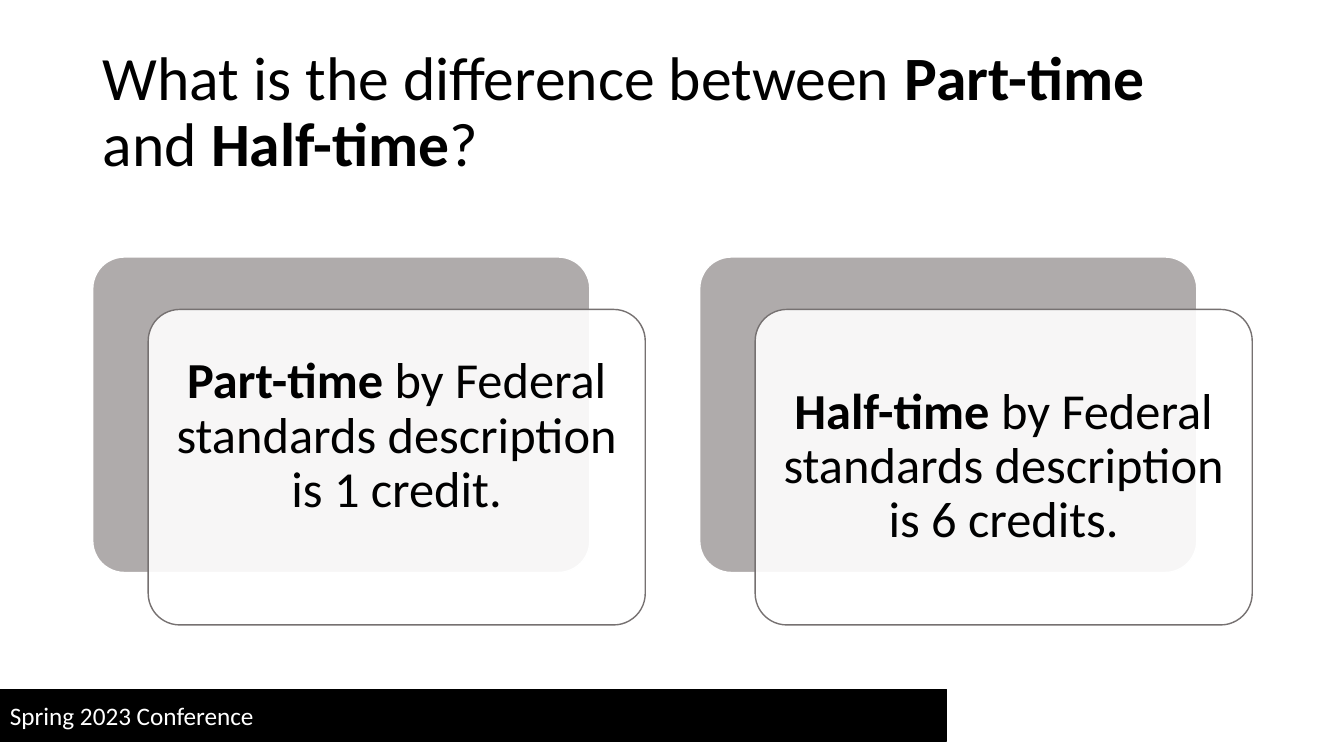
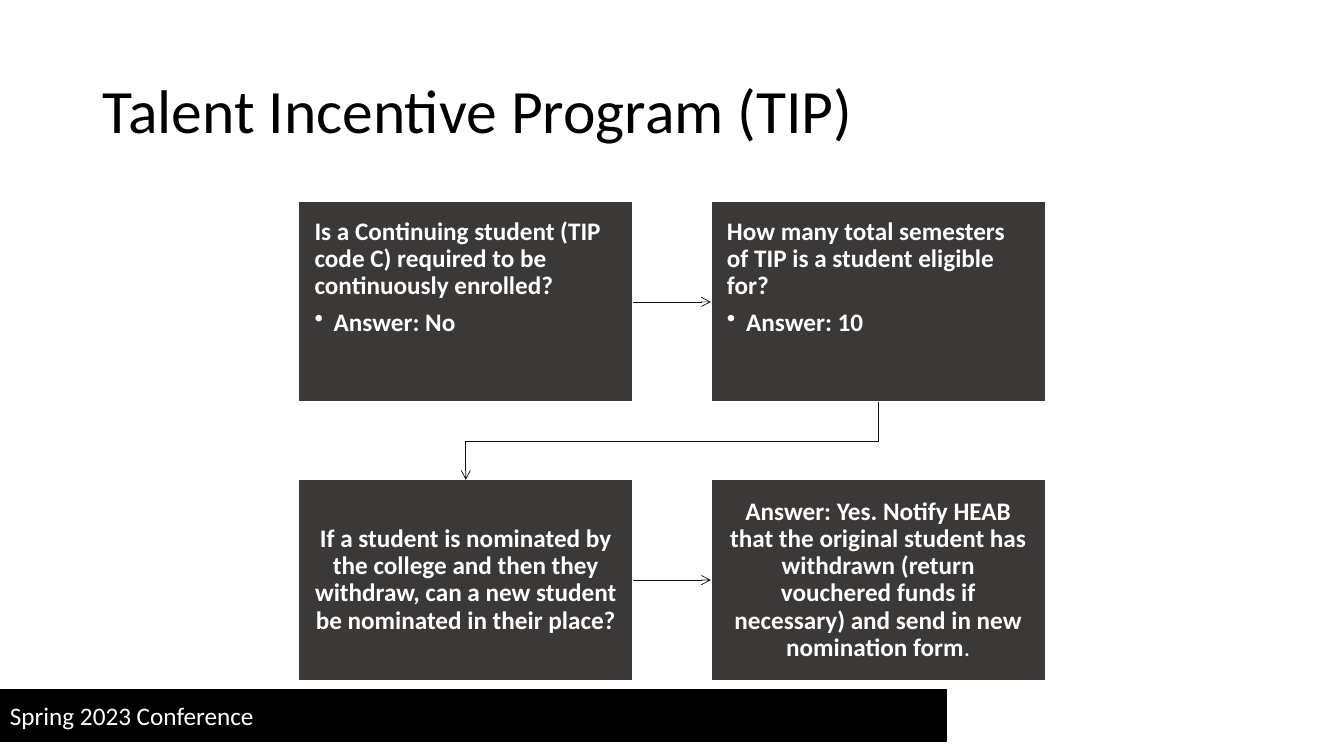
from dataclasses import dataclass
from typing import NamedTuple

import pptx
import pptx.dml.color
import pptx.enum.shapes
import pptx.enum.text
import pptx.oxml.ns
import pptx.util
from lxml import etree

Inches = pptx.util.Inches
Pt = pptx.util.Pt
qn = pptx.oxml.ns.qn
SHAPES = pptx.enum.shapes.MSO_SHAPE
CONNECTORS = pptx.enum.shapes.MSO_CONNECTOR
ALIGN = pptx.enum.text.PP_ALIGN
ANCHOR = pptx.enum.text.MSO_ANCHOR

FONT = "Calibri"
COLORS = {
    "ink": "000000",
    "paper": "FFFFFF",
    "card_back": "AFABAB",
    "card_edge": "767171",
    "step": "3B3838",
    "arrow": "0D0D0D",
}
TOP, LEFT, BOTTOM, RIGHT = range(4)  # connection sites of a rectangle


class Box(NamedTuple):
    left: float
    top: float
    width: float
    height: float

    def emu(self) -> list:
        return [Inches(length) for length in self]


@dataclass(frozen=True)
class Grid:
    """Equal cells, placed at a fixed step across and down."""
    left: float
    top: float
    width: float
    height: float
    step_x: float
    step_y: float = 0

    def cell(self, col: int, row: int = 0) -> Box:
        return Box(self.left + col * self.step_x, self.top + row * self.step_y,
                   self.width, self.height)


class Run(NamedTuple):
    text: str
    bold: bool = False


class Para(NamedTuple):
    runs: list
    bullet: bool = False


@dataclass(frozen=True)
class Definition:
    runs: list
    lift: float = 0  # extra room below the text


@dataclass(frozen=True)
class Step:
    col: int
    row: int
    paras: list
    centered: bool = False


# Places
SLIDE_W, SLIDE_H = 13.33, 7.5
TITLE = Box(0.92, 0.4, 11.5, 1.45)
BAND = Box(0, 6.84, 9.39, 0.51)
CARD_BACKS = Grid(0.92, 2.55, 4.93, 3.13, step_x=6.02)
CARD_FRONTS = Grid(1.47, 3.07, 4.93, 3.13, step_x=6.02)
FLOW = Grid(2.96, 2, 3.32, 1.99, step_x=4.09, step_y=2.76)

# Content
DIFFERENCE_TITLE = [Run("What is the difference between "), Run("Part-time", True),
                    Run(" and "), Run("Half-time", True), Run("?")]
DEFINITIONS = [
    Definition([Run("Part-time", True),
                Run(" by Federal standards description is 1 credit.")], lift=0.6),
    Definition([Run("Half-time", True),
                Run(" by Federal standards description is 6 credits.")]),
]
TIP_TITLE = [Run("Talent Incentive Program (TIP)")]
STEPS = [
    Step(0, 0, [
        Para([Run("Is a Continuing student (TIP code C) required to be "
                  "continuously enrolled?", True)]),
        Para([Run("Answer: No", True)], bullet=True)]),
    Step(1, 0, [
        Para([Run("How many total semesters of TIP is a student eligible for?", True)]),
        Para([Run("Answer: 10", True)], bullet=True)]),
    Step(0, 1, [
        Para([Run("If a student is nominated by the college and then they withdraw, "
                  "can a new student be nominated in their place?", True)])],
         centered=True),
    Step(1, 1, [
        Para([Run("Answer: Yes. Notify HEAB that the original student has withdrawn "
                  "(return vouchered funds if necessary) and send in new "
                  "nomination form", True), Run(".")])],
         centered=True),
]


def rgb(name: str):
    return pptx.dml.color.RGBColor.from_string(COLORS[name])


def write(shape, paras: list, *, size: float, color: str = "ink", align=ALIGN.LEFT,
          anchor=ANCHOR.MIDDLE, insets=(0.1, 0.05, 0.1, 0.05),
          spacing: float = 0.9, after: float = 0) -> None:
    """Fill a shape with formatted paragraphs; insets run left, top, right, bottom."""
    frame = shape.text_frame
    frame.word_wrap = True
    frame.auto_size = pptx.enum.text.MSO_AUTO_SIZE.NONE
    frame.vertical_anchor = anchor
    (frame.margin_left, frame.margin_top,
     frame.margin_right, frame.margin_bottom) = map(Inches, insets)
    for index, para in enumerate(paras):
        paragraph = frame.add_paragraph() if index else frame.paragraphs[0]
        if para.bullet:
            properties = paragraph._p.get_or_add_pPr()
            properties.set("marL", str(Inches(0.19)))
            properties.set("indent", str(-Inches(0.19)))
            etree.SubElement(properties, qn("a:buChar")).set("char", "•")
        paragraph.alignment = align
        paragraph.line_spacing = spacing
        paragraph.space_before = Pt(0)
        paragraph.space_after = Pt(after)
        for text, bold in para.runs:
            run = paragraph.add_run()
            run.text = text
            run.font.name = FONT
            run.font.size = Pt(size)
            run.font.bold = bold
            run.font.color.rgb = rgb(color)


def add_panel(slide, kind, box: Box, fill: str, line: str, opacity: int = 100):
    panel = slide.shapes.add_shape(kind, *box.emu())
    panel.shadow.inherit = False
    panel.fill.solid()
    panel.fill.fore_color.rgb = rgb(fill)
    panel.line.color.rgb = rgb(line)
    panel.line.width = Pt(1)
    if kind == SHAPES.ROUNDED_RECTANGLE:
        panel.adjustments[0] = 0.1
    if opacity < 100:
        color = panel.element.spPr.find(qn("a:solidFill")).find(qn("a:srgbClr"))
        etree.SubElement(color, qn("a:alpha")).set("val", str(opacity * 1000))
    return panel


def add_arrow(slide, kind, x1: float, y1: float, x2: float, y2: float):
    arrow = slide.shapes.add_connector(kind, *map(Inches, (x1, y1, x2, y2)))
    arrow.line.color.rgb = rgb("arrow")
    arrow.line.width = Pt(0.5)
    properties = arrow.element.spPr
    etree.SubElement(properties.find(qn("a:ln")), qn("a:tailEnd")).set("type", "arrow")
    etree.SubElement(properties, qn("a:effectLst"))
    return arrow


def add_return_arrow(slide, start: Box, end: Box) -> None:
    """Go down from the bottom of start, across, and down to the top of end."""
    x1, y1 = start.left + start.width / 2, start.top + start.height
    x2, y2 = end.left + end.width / 2, end.top
    mid_x, mid_y = (x1 + x2) / 2, (y1 + y2) / 2
    half_drop, half_run = (y2 - y1) / 2, (x1 - x2) / 2
    # The elbow starts level, so it is laid out sideways and turned a quarter
    arrow = add_arrow(slide, CONNECTORS.ELBOW, mid_x - half_drop, mid_y - half_run,
                      mid_x + half_drop, mid_y + half_run)
    arrow.element.spPr.find(qn("a:xfrm")).set("rot", str(90 * 60000))


def add_titled_slide(deck, title_runs: list):
    slide = deck.slides.add_slide(deck.slide_layouts[5])
    band = add_panel(slide, SHAPES.RECTANGLE, BAND, "ink", "ink")
    write(band, [Para([Run("Spring 2023 Conference")])], size=18, color="paper",
          spacing=1)
    title = slide.shapes.title
    title.left, title.top, title.width, title.height = TITLE.emu()
    write(title, [Para(title_runs)], size=44)
    return slide


def build_difference(deck) -> None:
    slide = add_titled_slide(deck, DIFFERENCE_TITLE)
    for col, definition in enumerate(DEFINITIONS):
        add_panel(slide, SHAPES.ROUNDED_RECTANGLE, CARD_BACKS.cell(col),
                  "card_back", "paper")
        card = add_panel(slide, SHAPES.ROUNDED_RECTANGLE, CARD_FRONTS.cell(col),
                         "paper", "card_edge", opacity=90)
        write(card, [Para(definition.runs)], size=36, align=ALIGN.CENTER,
              insets=(0.15, 0.15, 0.15, 0.15 + definition.lift))


def build_tip(deck) -> None:
    slide = add_titled_slide(deck, TIP_TITLE)
    # Questions and answers
    panels = {}
    for step in STEPS:
        panel = add_panel(slide, SHAPES.RECTANGLE, FLOW.cell(step.col, step.row),
                          "step", "paper")
        write(panel, step.paras, size=18, color="paper", after=6.3,
              align=ALIGN.CENTER if step.centered else ALIGN.LEFT,
              anchor=ANCHOR.MIDDLE if step.centered else ANCHOR.TOP,
              insets=(0.16, 0.17, 0.16, 0.17))
        panels[step.col, step.row] = panel
    # Arrows along each row, then back to the second row
    for row in range(2):
        arrow = add_arrow(slide, CONNECTORS.STRAIGHT, 0, 0, 1, 1)
        arrow.begin_connect(panels[0, row], RIGHT)
        arrow.end_connect(panels[1, row], LEFT)
    add_return_arrow(slide, FLOW.cell(1, 0), FLOW.cell(0, 1))


def main() -> None:
    deck = pptx.Presentation()
    deck.slide_width, deck.slide_height = Inches(SLIDE_W), Inches(SLIDE_H)
    build_difference(deck)
    build_tip(deck)
    deck.save("out.pptx")


if __name__ == "__main__":
    main()
